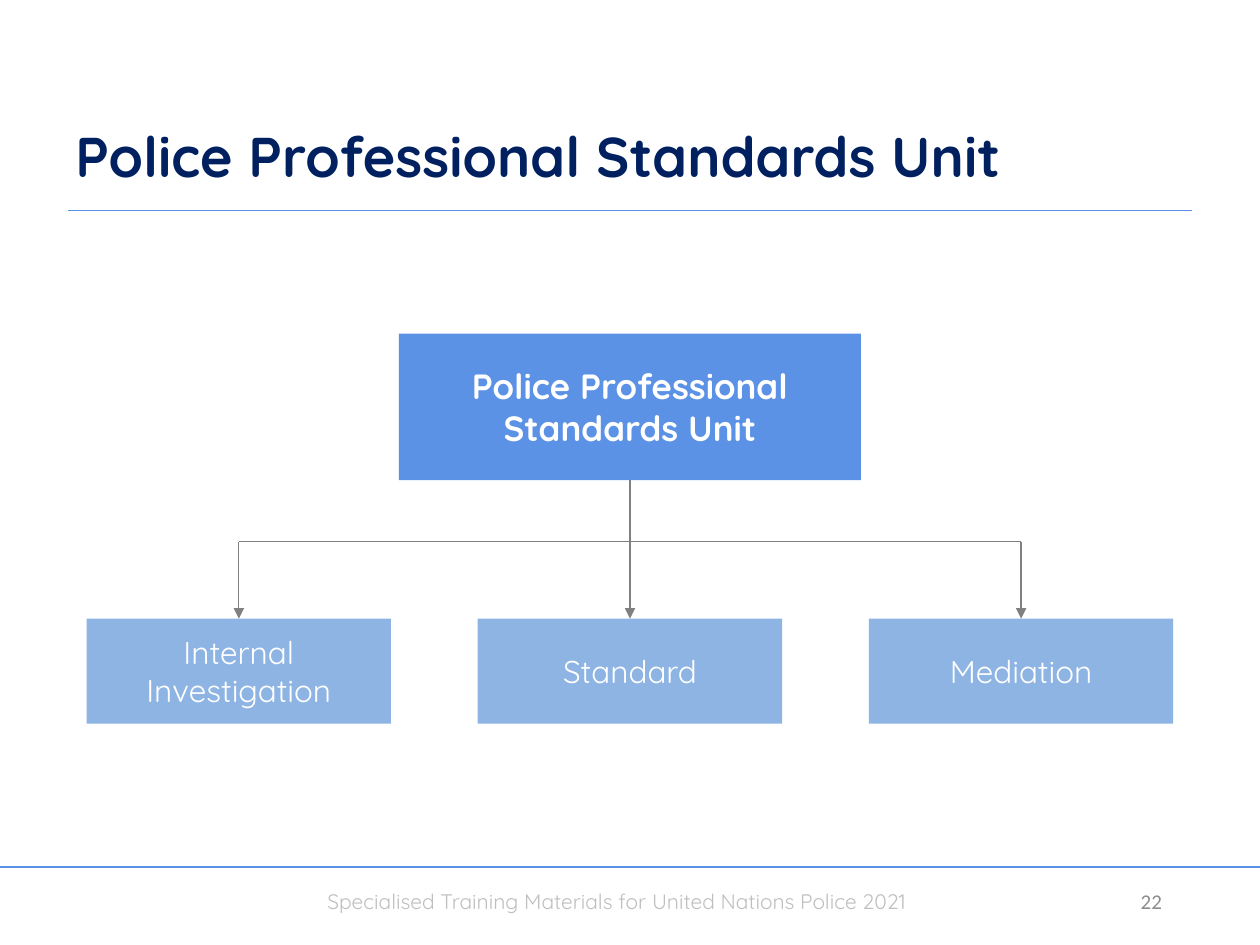
from lxml import etree
from pptx import Presentation
from pptx.dml.color import RGBColor
from pptx.enum.shapes import MSO_CONNECTOR, MSO_SHAPE
from pptx.enum.text import MSO_ANCHOR, PP_ALIGN
from pptx.oxml.ns import qn
from pptx.util import Pt

STRAIGHT = MSO_CONNECTOR.STRAIGHT
RECTANGLE = MSO_SHAPE.RECTANGLE
TOP, MIDDLE, BOTTOM = MSO_ANCHOR.TOP, MSO_ANCHOR.MIDDLE, MSO_ANCHOR.BOTTOM
LEFT, CENTER, RIGHT = PP_ALIGN.LEFT, PP_ALIGN.CENTER, PP_ALIGN.RIGHT
TOP_SITE, BOTTOM_SITE = 0, 2

COLORS = {
    "rule": "5B92E5",
    "unit": "5B92E5",
    "section": "8EB4E3",
    "connector": "808080",
    "title": "002060",
    "footer": "BFBFBF",
    "number": "8C8C8C",
    "white": "FFFFFF",
}


def write_text(shape, text, size, color, font="Quicksand", bold=False, align=LEFT, anchor=TOP):
    frame = shape.text_frame
    frame.word_wrap = True
    frame.vertical_anchor = anchor
    paragraph = frame.paragraphs[0]
    paragraph.alignment = align
    run = paragraph.add_run()
    run.text = text
    run.font.name = font
    run.font.size = Pt(size)
    run.font.bold = bold
    run.font.color.rgb = RGBColor.from_string(COLORS[color])
    return paragraph


def add_line(x1, y1, x2, y2, color, arrow=False):
    line = slide.shapes.add_connector(STRAIGHT, Pt(x1), Pt(y1), Pt(x2), Pt(y2))
    line.line.color.rgb = RGBColor.from_string(COLORS[color])
    line.line.width = Pt(0.75)
    if arrow:
        etree.SubElement(line.line._get_or_add_ln(), qn("a:tailEnd"), type="triangle")
    etree.SubElement(line._element.spPr, qn("a:effectLst"))
    return line


presentation = Presentation()
presentation.slide_width = Pt(720)
presentation.slide_height = Pt(540)
slide = presentation.slides.add_slide(presentation.slide_layouts[6])

add_line(0, 495.36, 720, 495.36, "rule")
footer = slide.shapes.add_textbox(Pt(180), Pt(504), Pt(360), Pt(21.6))
write_text(footer, "Specialised Training Materials for United Nations Police 2021", 12, "footer")
add_line(38.9, 120.24, 681.1, 120.24, "rule")
number = slide.shapes.add_textbox(Pt(619.2), Pt(500.4), Pt(51.84), Pt(28.8))
write_text(number, "22", 12, "number", font="Calibri", align=RIGHT, anchor=MIDDLE)
title = slide.shapes.add_textbox(Pt(36), Pt(36), Pt(563.76), Pt(75.6))
title_paragraph = write_text(
    title, "Police Professional Standards Unit", 32, "title", bold=True, anchor=BOTTOM
)
title_paragraph.line_spacing = Pt(34.4)

center_x = 360
unit_top, unit_width, unit_height = 190.7, 264, 83.7
section_top, section_width, section_height = 353.5, 174, 60
section_pitch = 223.5
bus_y = 309.6

boxes = [("Police Professional Standards Unit", center_x, unit_top, unit_width, unit_height,
          "unit", 20, True)]
for index, name in enumerate(["Internal Investigation", "Standard", "Mediation"]):
    boxes.append((name, center_x + (index - 1) * section_pitch, section_top,
                  section_width, section_height, "section", 18, False))

shapes = []
for text, middle, top, width, height, fill, size, bold in boxes:
    shape = slide.shapes.add_shape(
        RECTANGLE, Pt(middle - width / 2), Pt(top), Pt(width), Pt(height)
    )
    shape.shadow.inherit = False
    shape.fill.solid()
    shape.fill.fore_color.rgb = RGBColor.from_string(COLORS[fill])
    shape.line.fill.background()
    write_text(shape, text, size, "white", bold=bold, align=CENTER, anchor=MIDDLE)
    shapes.append(shape)

unit, investigation, standard, mediation = shapes
trunk = add_line(center_x, unit_top + unit_height, center_x, section_top, "connector", arrow=True)
trunk.begin_connect(unit, BOTTOM_SITE)
trunk.end_connect(standard, TOP_SITE)
add_line(center_x - section_pitch, bus_y, center_x + section_pitch, bus_y, "connector")
for section, x in [(investigation, center_x - section_pitch), (mediation, center_x + section_pitch)]:
    branch = add_line(x, bus_y, x, section_top, "connector", arrow=True)
    branch.end_connect(section, TOP_SITE)

presentation.save("out.pptx")
